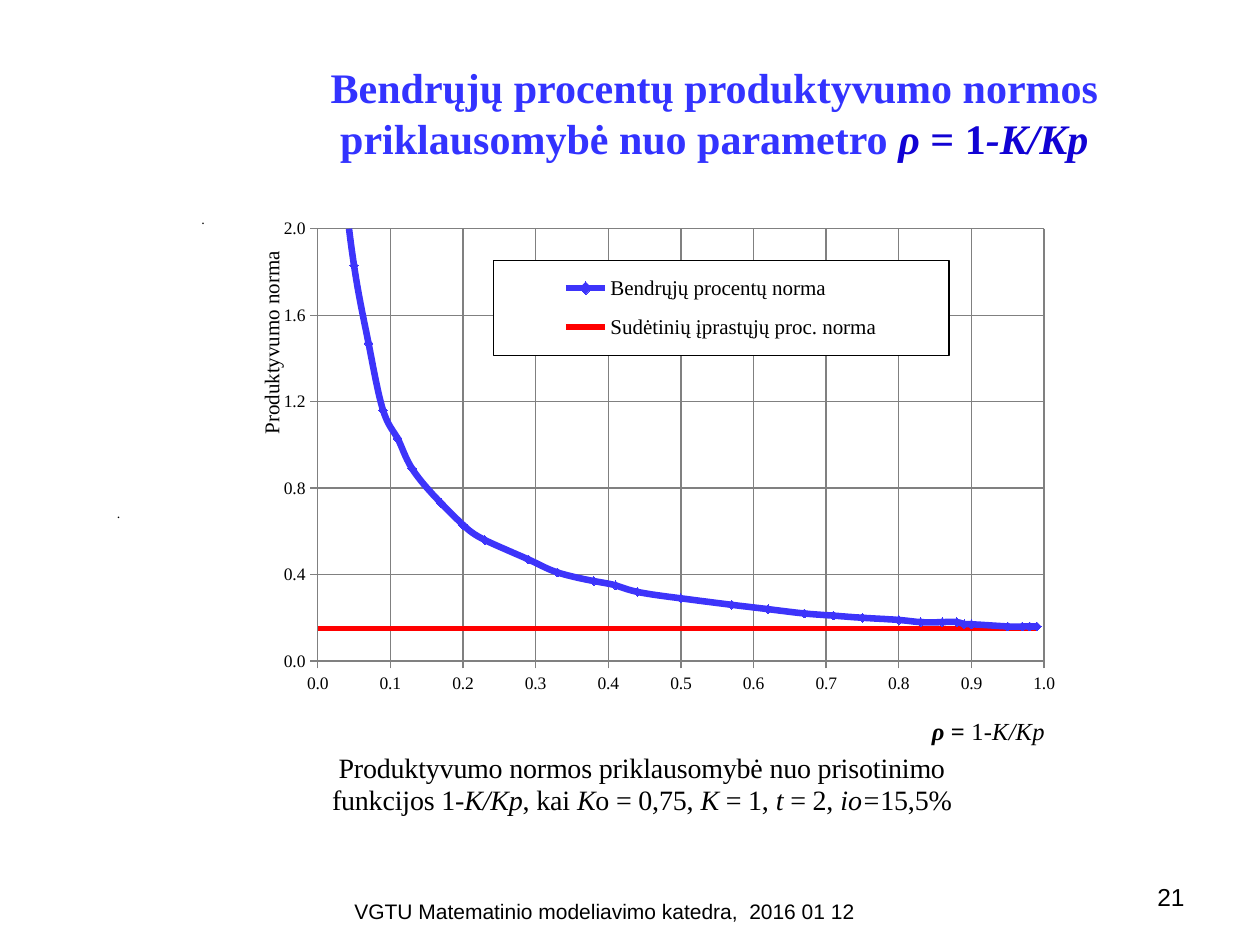
from pptx import Presentation
from pptx.chart.data import XyChartData
from pptx.dml.color import RGBColor
from pptx.enum.chart import XL_CHART_TYPE, XL_LEGEND_POSITION, XL_MARKER_STYLE, XL_TICK_MARK
from pptx.enum.text import MSO_ANCHOR, PP_ALIGN
from pptx.oxml import parse_xml
from pptx.oxml.ns import nsdecls
from pptx.util import Inches, Pt

BLACK = RGBColor(0x00, 0x00, 0x00)
BLUE = RGBColor(0x33, 0x33, 0xFF)
NAVY = RGBColor(0x11, 0x02, 0xD4)
CURVE = RGBColor(0x3D, 0x34, 0xFA)
RED = RGBColor(0xFF, 0x00, 0x00)
GREY = RGBColor(0x80, 0x80, 0x80)
SERIF = "Times New Roman"
SANS = "Arial"

BOLD = {"bold": True}
SLANT = {"italic": True}
BOTH = {"bold": True, "italic": True}

RHO = [0.99, 0.99, 0.98, 0.97, 0.95, 0.9, 0.89, 0.88, 0.86, 0.83, 0.8, 0.75,
       0.71, 0.67, 0.62, 0.57, 0.5, 0.44, 0.41, 0.38, 0.33, 0.29, 0.23, 0.2,
       0.17, 0.13, 0.11, 0.09, 0.07, 0.05, 0.03, 0.02, 0.01, 0, 0, 0]
NORM = [0.16, 0.16, 0.16, 0.16, 0.16, 0.17, 0.17, 0.18, 0.18, 0.18, 0.19, 0.2,
        0.21, 0.22, 0.24, 0.26, 0.29, 0.32, 0.35, 0.37, 0.41, 0.47, 0.56, 0.63,
        0.73, 0.89, 1.03, 1.16, 1.47, 1.83, 2.53, 3.24, 4.89, 17.29, 56.75, 181.58]
FLAT = [0.15] * len(RHO)


def cut(box, left, top, wide, high):
    x, y, w, h = box
    return (int(x + w * left / 100), int(y + h * top / 100),
            int(w * wide / 100), int(h * high / 100))


def style(thing, form):
    for name, value in form.items():
        if name == "color":
            thing.color.rgb = value
        else:
            setattr(thing, name, value)


def write(frame, lines, form, align=None):
    for i, line in enumerate(lines):
        para = frame.paragraphs[0] if i == 0 else frame.add_paragraph()
        para.alignment = align
        for words, extra in line:
            run = para.add_run()
            run.text = words
            style(run.font, {**form, **extra})


def label(slide, box, runs, form, align=PP_ALIGN.LEFT, anchor=MSO_ANCHOR.TOP):
    frame = slide.shapes.add_textbox(*box).text_frame
    style(frame, {"word_wrap": True, "vertical_anchor": anchor})
    write(frame, [runs], form, align)


def place(node, index, shares, inner=False):
    for old in node.findall("{*}layout"):
        node.remove(old)
    target = '<c:layoutTarget val="inner"/>' if inner else ""
    modes = "".join(f'<c:{k}Mode val="edge"/>' for k in "xy")
    sizes = "".join(f'<c:{k} val="{v / 100:.4f}"/>' for k, v in zip("xywh", shares))
    node.insert(index, parse_xml(
        f'<c:layout {nsdecls("c")}><c:manualLayout>{target}{modes}{sizes}'
        '</c:manualLayout></c:layout>'))


def head(slide, box):
    form = {"name": SERIF, "size": Pt(24), "bold": True, "color": BLUE}
    tint = {"color": NAVY}
    runs = [("Bendrųjų procentų produktyvumo normos priklausomybė nuo parametro ", {}),
            ("ρ", {**tint, **SLANT}), (" = 1", tint), ("-K/Kp", {**tint, **SLANT})]
    label(slide, cut(box, 20.1, 0, 73.2, 100), runs, form, PP_ALIGN.CENTER)


def dots(slide, box):
    form = {"name": SERIF, "size": Pt(8), "color": BLACK}
    label(slide, box, [(".", {})], form, anchor=MSO_ANCHOR.MIDDLE)
    label(slide, cut(box, 7.88, 2.88, 82.35, 95.38), [(".", {})], form)


def scale(axis, top, step):
    style(axis, {"minimum_scale": 0, "maximum_scale": top, "major_unit": step,
                 "has_major_gridlines": True, "has_minor_gridlines": False,
                 "major_tick_mark": XL_TICK_MARK.OUTSIDE,
                 "minor_tick_mark": XL_TICK_MARK.NONE})
    style(axis.tick_labels, {"number_format": "0.0", "number_format_is_linked": False})
    style(axis.tick_labels.font, {"name": SERIF, "size": Pt(10), "color": BLACK})
    for line in (axis.format.line, axis.major_gridlines.format.line):
        style(line, {"color": GREY, "width": Pt(0.75)})


def name(title, lines, size, spot):
    form = {"name": SERIF, "size": Pt(size), "color": BLACK, "bold": False, "italic": False}
    write(title.text_frame, lines, form, PP_ALIGN.CENTER)
    place(title._element, 1, spot)


def key(chart):
    chart.has_legend = True
    legend = chart.legend
    style(legend, {"position": XL_LEGEND_POSITION.RIGHT, "include_in_layout": False})
    style(legend.font, {"name": SERIF, "size": Pt(12), "color": BLACK})
    node = legend._element
    place(node, 1, (32.1, 9.9, 52.2, 14.5))
    frame = parse_xml(
        f'<c:spPr {nsdecls("c", "a")}><a:solidFill><a:srgbClr val="FFFFFF"/></a:solidFill>'
        '<a:ln w="9525"><a:solidFill><a:srgbClr val="000000"/></a:solidFill></a:ln></c:spPr>')
    node.find("{*}txPr").addprevious(frame)


def graph(slide, box):
    data = XyChartData()
    for title, values in (("Bendrųjų procentų norma", NORM),
                          ("Sudėtinių įprastųjų proc. norma", FLAT)):
        row = data.add_series(title)
        for x, y in zip(RHO, values):
            row.add_data_point(x, y)
    chart = slide.shapes.add_chart(XL_CHART_TYPE.XY_SCATTER_SMOOTH, *box, data).chart
    style(chart.font, {"name": SERIF, "size": Pt(10), "color": BLACK})
    plot = chart.plots[0]
    plot.vary_by_categories = False
    for row, color, width in zip(plot.series, (CURVE, RED), (3.75, 3.25)):
        style(row.format.line, {"color": color, "width": Pt(width)})
        row.marker.style = XL_MARKER_STYLE.NONE
        row._element.find("{*}smooth").set("val", "1")
    mark = plot.series[0].marker
    style(mark, {"style": XL_MARKER_STYLE.DIAMOND, "size": 5})
    mark.format.fill.solid()
    mark.format.fill.fore_color.rgb = CURVE
    mark.format.line.color.rgb = CURVE
    scale(chart.category_axis, 1, 0.1)
    scale(chart.value_axis, 2, 0.4)
    name(chart.category_axis.axis_title,
         [[("ρ", BOTH), (" = ", BOLD), ("1-", {}), ("K/Kp", SLANT)]], 14, (81.9, 78.8))
    side = chart.value_axis.axis_title
    name(side, [[("Produktyvumo norma", {})]], 12, (4.8, 7.9))
    side.text_frame._txBody.bodyPr.set("rot", "-5400000")
    name(chart.chart_title,
         [[("Produktyvumo normos priklausomybė nuo prisotinimo", {})],
          [("funkcijos 1-", {}), ("K/Kp", SLANT), (", kai ", {}), ("K", SLANT),
           ("o = 0,75, ", {}), ("K", SLANT), (" = 1, ", {}), ("t", SLANT),
           (" = 2, ", {}), ("io=", SLANT), ("15,5%", {})]], 16, (13.2, 84.3))
    key(chart)
    area = chart._chartSpace.find(".//{*}plotArea")
    place(area, 0, (12, 5.1, 83.2, 66), inner=True)


def foot(slide, box):
    form = {"name": SANS, "color": BLACK}
    label(slide, cut(box, 71.7, 0, 23.3, 100), [("21", {})],
          {**form, "size": Pt(14)}, PP_ALIGN.RIGHT)
    label(slide, cut(box, 15.7, 32.5, 64.6, 65),
          [("VGTU Matematinio modeliavimo katedra,\u00a0 2016 01 12", {})],
          {**form, "size": Pt(12)}, PP_ALIGN.CENTER)


def main():
    deck = Presentation()
    style(deck, {"slide_width": Inches(10), "slide_height": Inches(7.5)})
    slide = deck.slides.add_slide(deck.slide_layouts[6])
    page = (0, 0, deck.slide_width, deck.slide_height)
    dots(slide, cut(page, 8.3, 19.6, 85, 69.33))
    head(slide, cut(page, 0, 5.87, 100, 12.13))
    graph(slide, cut(page, 16.9, 20.67, 69.3, 69.33))
    foot(slide, cut(page, 0, 92.67, 100, 5.33))
    deck.save("out.pptx")


if __name__ == "__main__":
    main()
